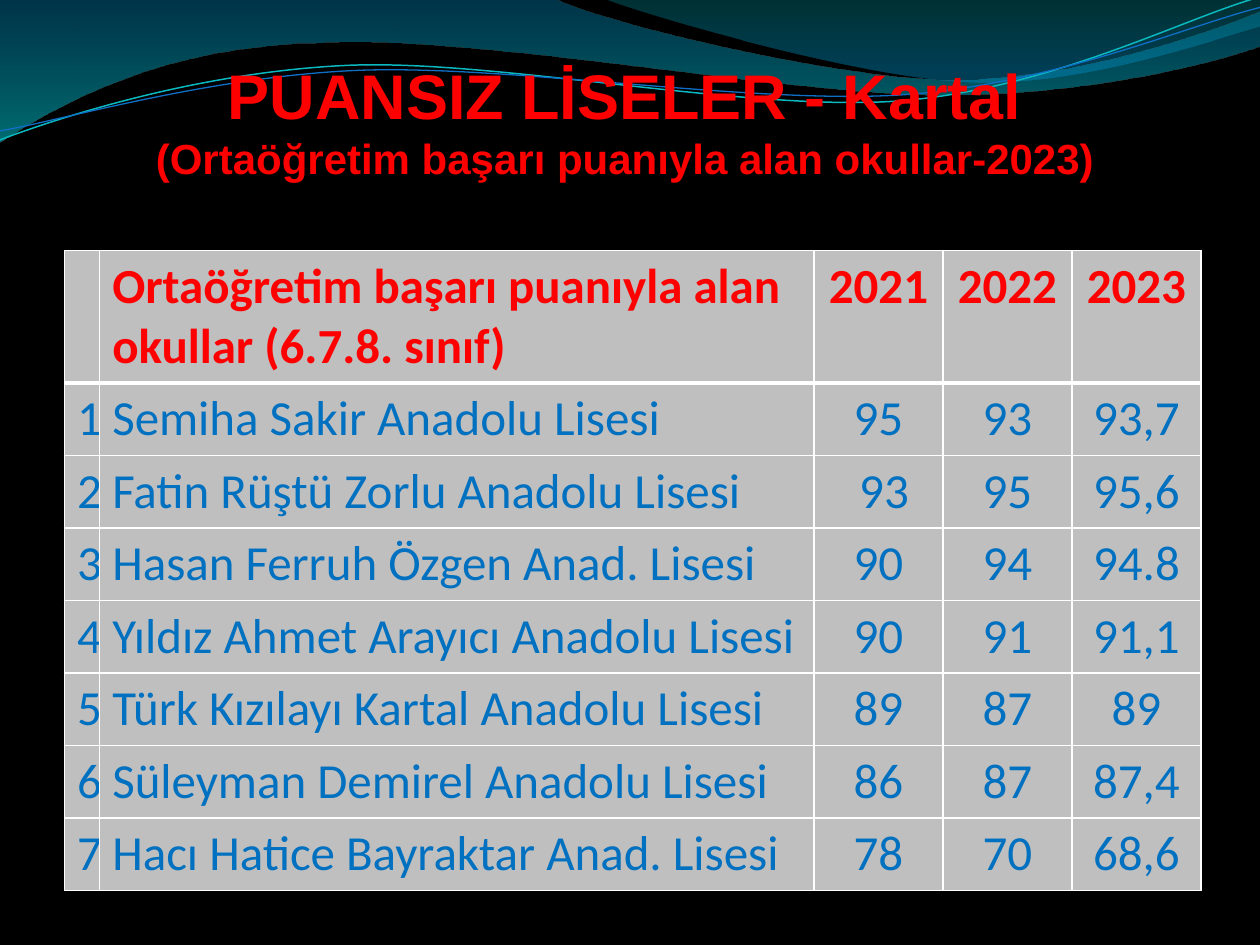
from dataclasses import dataclass
from typing import Optional

from lxml import etree
from pptx import Presentation
from pptx import util as u
from pptx.dml.color import RGBColor
from pptx.enum import text
from pptx.oxml.ns import qn

BLACK = RGBColor(0x00, 0x00, 0x00)
WHITE = RGBColor(0xFF, 0xFF, 0xFF)
RED = RGBColor(0xFF, 0x00, 0x00)
BLUE = RGBColor(0x00, 0x70, 0xC0)
GREY = RGBColor(0xBF, 0xBF, 0xBF)
DEEP_BLUE = RGBColor(0x00, 0x74, 0xA1)
TURQUOISE = RGBColor(0x00, 0xC6, 0xCF)
TEAL = RGBColor(0x00, 0xA1, 0xA9)
OCEAN = RGBColor(0x00, 0x8B, 0xBF)
CYAN_LINE = RGBColor(0x0A, 0xB8, 0xBF)
BLUE_LINE = RGBColor(0x0F, 0x6F, 0xC6)

LINE_TILT = 357.3
HEADER_HEIGHT = u.Cm(2.66)
SCHOOL_HEIGHT = u.Cm(1.46)
COLUMN_WIDTHS = [0.71, 14.4, 2.6, 2.6, 2.6]

Point = tuple[float, float]


@dataclass
class Stop:
    position: float
    color: RGBColor
    opacity: int


@dataclass
class Wave:
    start: Point
    segments: list[list[Point]]
    stops: Optional[list[Stop]] = None
    line: Optional[RGBColor] = None
    line_width: float = 0.75


@dataclass
class School:
    name: str
    scores: list[str]


WAVES = [
    Wave((0, -0.03), [
        [(11.18, -0.03)],
        [(12.09, 0.43), (16.87, 1.6), (19.25, 1.6)],
        [(21.67, 1.6), (24.33, 0.66), (25.4, 0.23)],
        [(25.43, 0.91)],
        [(24.97, 1.12), (22.1, 1.93), (18.95, 1.91)],
        [(15.8, 1.91), (9.7, 0.71), (6.53, 0.86)],
        [(3.28, 0.89), (1.17, 2.11), (-0.03, 2.87)],
        [(0, -0.03)],
    ], stops=[Stop(0, DEEP_BLUE, 45), Stop(1, TURQUOISE, 55)]),
    Wave((12.17, -0.03), [
        [(12.93, 0.28), (17.32, 1.57), (19.53, 1.65)],
        [(21.74, 1.75), (24.41, 0.81), (25.4, 0.53)],
        [(25.4, 0)],
        [(12.17, -0.03)],
    ], stops=[Stop(0, TEAL, 30), Stop(0.8, OCEAN, 45)]),
    Wave((-0.05, 2.22), [
        [(1.19, 1.82), (4.02, 1.04), (7.05, 1.05)],
        [(10.05, 1.07), (15.02, 2.37), (18.08, 2.29)],
        [(21.13, 2.2), (23.87, 0.91), (25.41, 0.55)],
    ], line=CYAN_LINE, line_width=0.85),
    Wave((-0.04, 2.04), [
        [(1.16, 1.9), (4.18, 1.15), (7.2, 1.16)],
        [(10.25, 1.18), (15.13, 2.23), (18.19, 2.17)],
        [(21.21, 2.1), (23.93, 1.06), (25.45, 0.75)],
    ], line=BLUE_LINE),
]

HEADINGS = ["", "Ortaöğretim başarı puanıyla alan okullar (6.7.8. sınıf)",
            "2021", "2022", "2023"]
SCHOOLS = [
    School("Semiha Sakir Anadolu Lisesi", ["95", "93", "93,7"]),
    School("Fatin Rüştü Zorlu Anadolu Lisesi", [" 93", "95", "95,6"]),
    School("Hasan Ferruh Özgen Anad. Lisesi", ["90", "94", "94.8"]),
    School("Yıldız Ahmet Arayıcı Anadolu Lisesi", ["90", "91", "91,1"]),
    School("Türk Kızılayı Kartal Anadolu Lisesi", ["89", "87", "89"]),
    School("Süleyman Demirel Anadolu Lisesi", ["86", "87", "87,4"]),
    School("Hacı Hatice Bayraktar Anad. Lisesi", ["78", "70", "68,6"]),
]


def bend_segments(shape, segments: list[list[Point]]) -> None:
    outline = next(shape._element.iter(qn("a:path")))
    straight = iter(outline.findall(qn("a:lnTo")))
    for segment in segments:
        parts = [next(straight) for _ in segment]
        if len(parts) == 3:
            curve = etree.Element(qn("a:cubicBezTo"))
            parts[0].addprevious(curve)
            for part in parts:
                curve.append(part.find(qn("a:pt")))
                outline.remove(part)


def draw_wave(slide, wave: Wave) -> None:
    points = [wave.start] + [point for segment in wave.segments for point in segment]
    vertices = [(u.Cm(x), u.Cm(y)) for x, y in points]
    builder = slide.shapes.build_freeform(*vertices[0])
    builder.add_line_segments(vertices[1:], close=wave.stops is not None)
    shape = builder.convert_to_shape()
    bend_segments(shape, wave.segments)
    shape.shadow.inherit = False
    if wave.stops is None:
        shape.rotation = LINE_TILT
        shape.fill.background()
        shape.line.color.rgb = wave.line
        shape.line.width = u.Pt(wave.line_width)
        return
    shape.line.fill.background()
    shape.fill.gradient()
    shape.fill.gradient_angle = 270
    for gradient_stop, stop in zip(shape.fill.gradient_stops, wave.stops):
        gradient_stop.color.rgb = stop.color
        gradient_stop.position = stop.position
    colors = shape._element.spPr.find(qn("a:gradFill")).iter(qn("a:srgbClr"))
    for color, stop in zip(colors, wave.stops):
        etree.SubElement(color, qn("a:alpha"), val=str(stop.opacity * 1000))


def style_paragraph(paragraph, font: str, size: int, color: RGBColor,
                    bold: bool, centred: bool) -> None:
    paragraph.alignment = text.PP_ALIGN.CENTER if centred else text.PP_ALIGN.LEFT
    for run in paragraph.runs:
        run.font.name = font
        run.font.size = u.Pt(size)
        run.font.color.rgb = color
        run.font.bold = bold


def draw_borders(cell, top: int, bottom: int) -> None:
    properties = cell._tc.get_or_add_tcPr()
    edges = {"a:lnL": 1, "a:lnR": 1, "a:lnT": top, "a:lnB": bottom}
    for index, (edge, width) in enumerate(edges.items()):
        border = etree.Element(qn(edge), w=str(u.Pt(width)))
        fill = etree.SubElement(border, qn("a:solidFill"))
        etree.SubElement(fill, qn("a:srgbClr"), val=str(WHITE))
        properties.insert(index, border)


def draw_scores(slide) -> None:
    rows = [HEADINGS] + [[str(rank), school.name, *school.scores]
                         for rank, school in enumerate(SCHOOLS, 1)]
    scores = slide.shapes.add_table(
        len(rows), len(HEADINGS), u.Cm(1.3), u.Cm(5.05), u.Cm(sum(COLUMN_WIDTHS)),
        HEADER_HEIGHT + SCHOOL_HEIGHT * len(SCHOOLS)).table
    for column, width in zip(scores.columns, COLUMN_WIDTHS):
        column.width = u.Cm(width)
    for r, values in enumerate(rows):
        heading = r == 0
        scores.rows[r].height = HEADER_HEIGHT if heading else SCHOOL_HEIGHT
        for c, value in enumerate(values):
            cell = scores.cell(r, c)
            cell.text_frame.text = value
            cell.fill.solid()
            cell.fill.fore_color.rgb = GREY
            draw_borders(cell, 3 if r == 1 else 1, 3 if heading else 1)
            style_paragraph(cell.text_frame.paragraphs[0], "Calibri", 28,
                            RED if heading else BLUE, heading, c != 1)


def draw_title(slide) -> None:
    title = slide.shapes.add_textbox(u.Cm(2.1), u.Cm(1.02), u.Cm(21), u.Cm(2.82)).text_frame
    title.word_wrap = True
    title.auto_size = text.MSO_AUTO_SIZE.SHAPE_TO_FIT_TEXT
    title.text = "PUANSIZ LİSELER - Kartal\n(Ortaöğretim başarı puanıyla alan okullar-2023)"
    for paragraph, size in zip(title.paragraphs, (36, 24)):
        style_paragraph(paragraph, "Arial", size, RED, True, True)


def main() -> None:
    deck = Presentation()
    deck.slide_width, deck.slide_height = u.Cm(25.4), u.Cm(19.05)
    slide = deck.slides.add_slide(deck.slide_layouts[6])
    slide.background.fill.solid()
    slide.background.fill.fore_color.rgb = BLACK
    for wave in WAVES:
        draw_wave(slide, wave)
    draw_scores(slide)
    draw_title(slide)
    deck.save("out.pptx")


if __name__ == "__main__":
    main()
